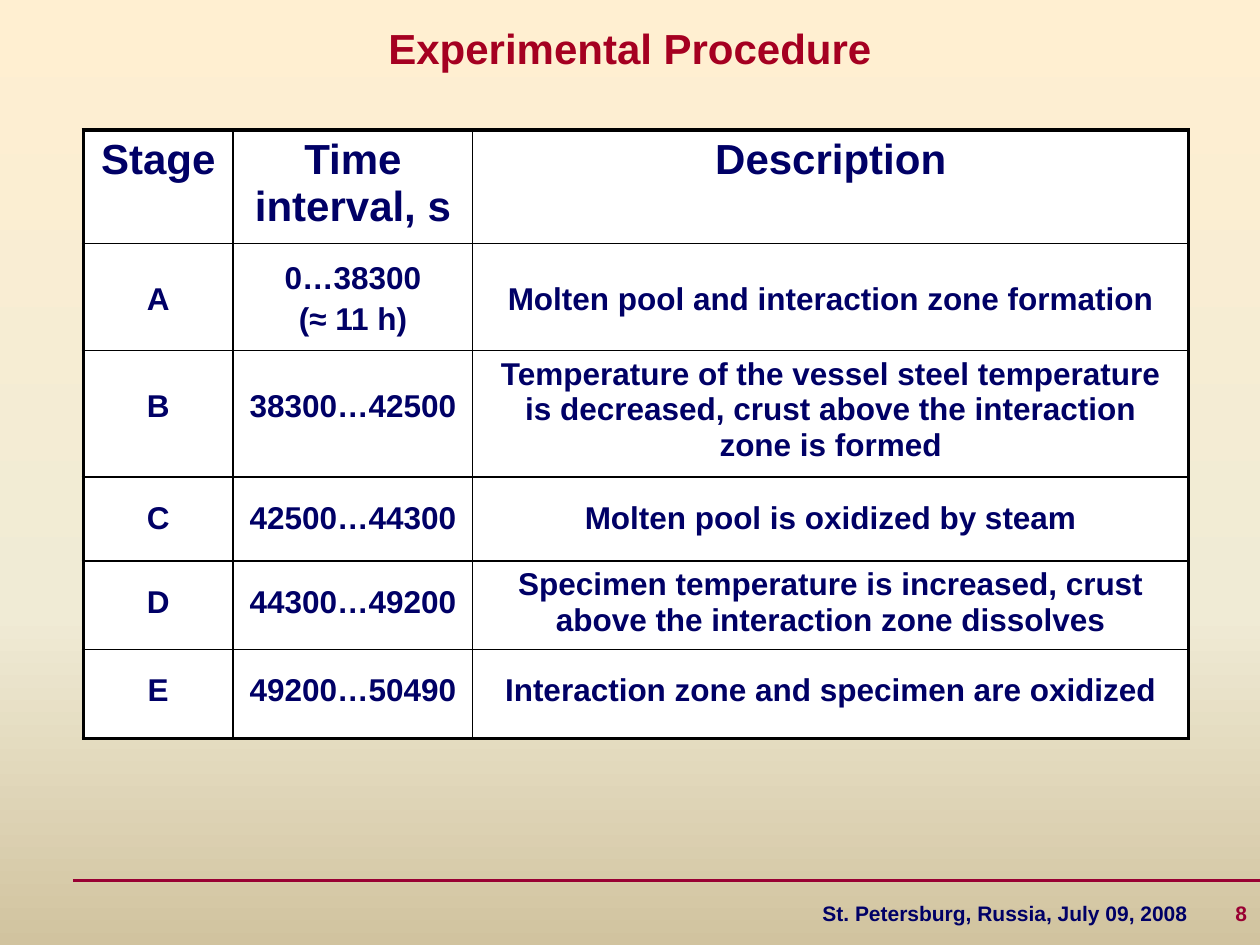
from copy import deepcopy

from lxml.etree import SubElement
from pptx import Presentation
from pptx.dml.color import RGBColor
from pptx.enum.shapes import MSO_CONNECTOR
from pptx.enum.text import MSO_ANCHOR, PP_ALIGN
from pptx.oxml.ns import qn
from pptx.util import Cm, Pt

COLORS = {
    "sky": "FFEFD1", "haze": "F0EBD5", "sand": "D1C39F",
    "title": "A50021", "accent": "990033", "text": "000066",
    "border": "000000", "cell": "FFFFFF",
}


def write(paragraph, text, size=18, color="text", align=PP_ALIGN.CENTER,
          line=None, before=0):
    """Append a bold run to the paragraph and format both."""
    paragraph.alignment = align
    paragraph.space_before = Pt(before)
    if line:
        paragraph.line_spacing = line
    run = paragraph.add_run()
    run.text = text
    run.font.name = "Arial"
    run.font.size = Pt(size)
    run.font.bold = True
    run.font.color.rgb = RGBColor.from_string(COLORS[color])


def add_border(cell, side, width):
    border = SubElement(cell._tc.get_or_add_tcPr(), qn(f"a:ln{side}"), w=str(Pt(width)))
    fill = SubElement(border, qn("a:solidFill"))
    SubElement(fill, qn("a:srgbClr"), val=COLORS["border"])


prs = Presentation()
prs.slide_width, prs.slide_height = Cm(25.4), Cm(19.05)
slide = prs.slides.add_slide(prs.slide_layouts[6])

# Background gradient, top to bottom
background = slide.background.fill
background.gradient()
background.gradient_angle = 270
stop_list = slide.element.find(".//" + qn("a:gsLst"))
stop_list.append(deepcopy(stop_list[-1]))
for stop, (position, color) in zip(background.gradient_stops,
                                   [(0, "sky"), (0.65, "haze"), (1, "sand")]):
    stop.position = position
    stop.color.rgb = RGBColor.from_string(COLORS[color])

# Footer rule, place and date, slide number
rule = slide.shapes.add_connector(MSO_CONNECTOR.STRAIGHT,
                                  Cm(1.47), Cm(17.75), Cm(25.4), Cm(17.75))
rule.line.color.rgb = RGBColor.from_string(COLORS["accent"])
rule.line.width = Pt(2.25)
SubElement(rule._element.spPr, qn("a:effectLst"))

footer = slide.shapes.add_textbox(Cm(16.33), Cm(17.78), Cm(9.07), Cm(1.27)).text_frame
footer.word_wrap = True
footer.vertical_anchor = MSO_ANCHOR.MIDDLE
footer.margin_right = Cm(0.1)
footer_line = footer.paragraphs[0]
tabs = SubElement(footer_line._p.get_or_add_pPr(), qn("a:tabLst"))
SubElement(tabs, qn("a:tab"), pos=str(Cm(8.56)), algn="r")
write(footer_line, "St. Petersburg, Russia, July 09, 2008\t", size=12, align=PP_ALIGN.LEFT)
write(footer_line, "8", size=12, color="accent", align=PP_ALIGN.LEFT)

title = slide.shapes.add_textbox(0, 0, Cm(25.4), Cm(1.93)).text_frame
title.word_wrap = True
title.vertical_anchor = MSO_ANCHOR.MIDDLE
write(title.paragraphs[0], "Experimental Procedure", size=24, color="title")

# Stages: row height, then the lines of each cell as (text, line spacing)
STAGES = [
    (2.29, [("Stage", 1)], [("Time interval, s", 1)], [("Description", 1)]),
    (2.16, [("A", 1.9)], [("0…38300", 1.3), ("(≈ 11 h)", 1)],
     [("Molten pool and interaction zone formation", 1.9)]),
    (2.54, [("B", 1.9)], [("38300…42500", 1.9)],
     [("Temperature of the vessel steel temperature is decreased, "
       "crust above the interaction zone is formed", 1)]),
    (1.7, [("C", 1.5)], [("42500…44300", 1.5)],
     [("Molten pool is oxidized by steam", 1.5)]),
    (1.78, [("D", 1.5)], [("44300…49200", 1.5)],
     [("Specimen temperature is increased, "
       "crust above the interaction zone dissolves", 1)]),
    (1.8, [("E", 1.5)], [("49200…50490", 1.5)],
     [("Interaction zone and specimen are oxidized", 1.5)]),
]
COLUMN_WIDTHS = [3.02, 4.83, 14.43]
last_row, last_col = len(STAGES) - 1, len(COLUMN_WIDTHS) - 1
stages = slide.shapes.add_table(
    len(STAGES), len(COLUMN_WIDTHS), Cm(1.68), Cm(2.62),
    Cm(sum(COLUMN_WIDTHS)), Cm(sum(stage[0] for stage in STAGES))).table
stages.first_row = stages.horz_banding = False
for column, width in zip(stages.columns, COLUMN_WIDTHS):
    column.width = Cm(width)

for r, (height, *entries) in enumerate(STAGES):
    stages.rows[r].height = Cm(height)
    size = 24 if r == 0 else 18
    for c, lines in enumerate(entries):
        cell = stages.cell(r, c)
        outer_sides = {"L": c == 0, "R": c == last_col, "T": r == 0, "B": r == last_row}
        for side, is_outer in outer_sides.items():
            add_border(cell, side, 2.25 if is_outer else 1)
        cell.fill.solid()
        cell.fill.fore_color.rgb = RGBColor.from_string(COLORS["cell"])
        frame = cell.text_frame
        for i, (text, spacing) in enumerate(lines):
            paragraph = frame.add_paragraph() if i else frame.paragraphs[0]
            write(paragraph, text, size=size, line=spacing, before=0.2 * size if i else 0)

prs.save("out.pptx")
